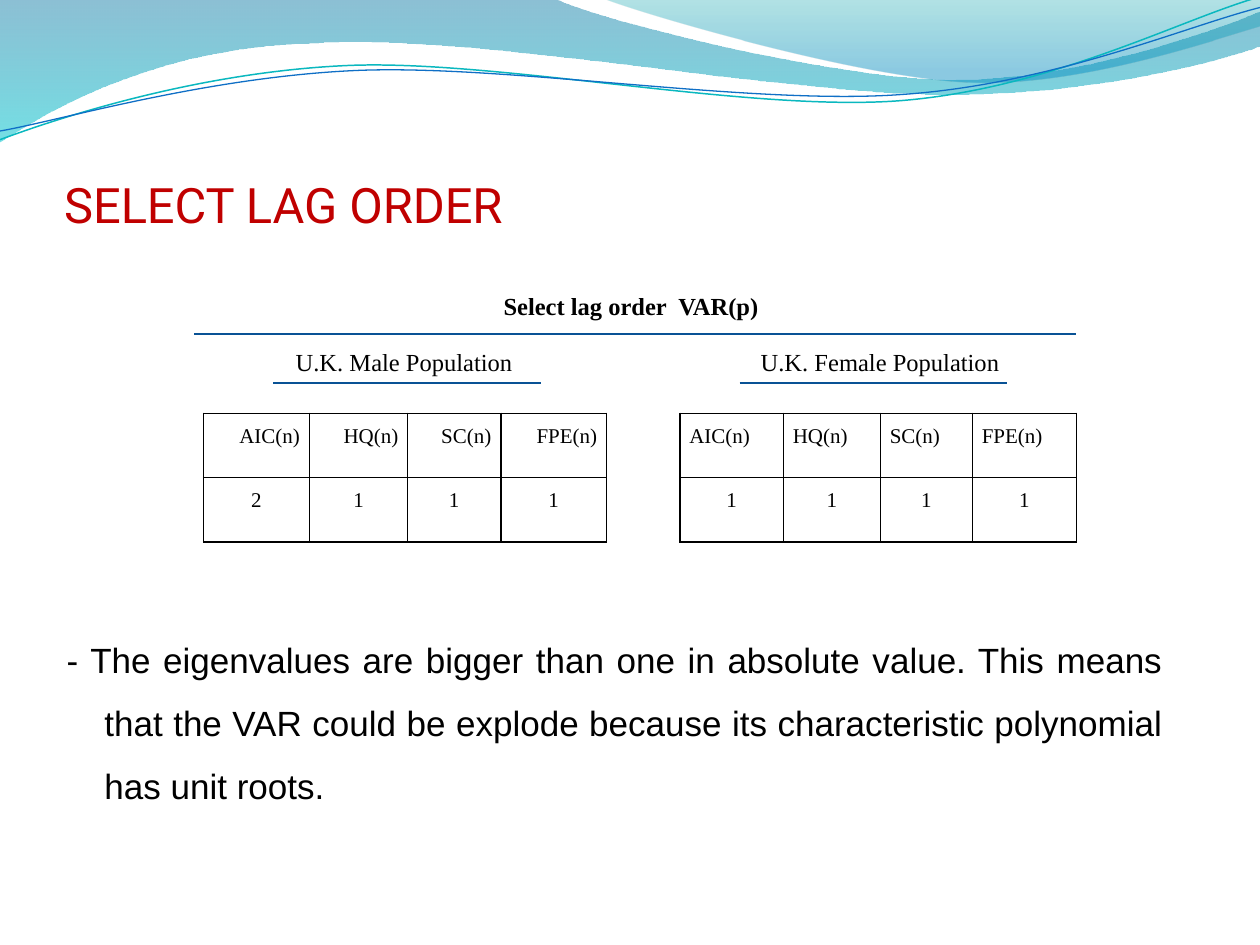
import math

import pptx
import pptx.dml.color
import pptx.enum.shapes
import pptx.enum.text
import pptx.oxml
import pptx.oxml.ns
import pptx.util

Pt = pptx.util.Pt
ALIGN = pptx.enum.text.PP_ALIGN
ANCHOR = pptx.enum.text.MSO_ANCHOR
SERIF = "Times New Roman"


def rgb(code):
    return pptx.dml.color.RGBColor.from_string(code)


def make_xml(markup):
    return pptx.oxml.parse_xml(markup.format(ns=pptx.oxml.ns.nsdecls("a")))


def write_text(frame, text, font=SERIF, size=14, color="000000", bold=False, wrap=True,
               align=ALIGN.LEFT, anchor=ANCHOR.MIDDLE, spacing=1.0, hanging=0, tabs=()):
    frame.word_wrap = wrap
    frame.vertical_anchor = anchor
    paragraph = frame.paragraphs[0]
    paragraph.alignment = align
    paragraph.line_spacing = spacing
    properties = paragraph._p.get_or_add_pPr()
    if hanging:
        properties.set("marL", str(Pt(hanging)))
        properties.set("indent", str(Pt(-hanging)))
    if tabs:
        stops = "".join(f'<a:tab pos="{Pt(tab)}" algn="l"/>' for tab in tabs)
        properties.append(make_xml(f"<a:tabLst {{ns}}>{stops}</a:tabLst>"))
    run = paragraph.add_run()
    run.text = text
    run.font.name = font
    run.font.size = Pt(size)
    run.font.bold = bold
    run.font.color.rgb = rgb(color)


def rotate(point, center, degrees):
    angle = math.radians(degrees)
    dx, dy = point[0] - center[0], point[1] - center[1]
    return (center[0] + dx * math.cos(angle) - dy * math.sin(angle),
            center[1] + dx * math.sin(angle) + dy * math.cos(angle))


class SlideBuilder:
    rule_color = "095295"
    rule_width = 0.75
    border_color = "000000"
    border_width = 1
    row_height = 36.72
    cell_margin = 5.4
    strand_tilt = -2.7

    def __init__(self, slide):
        self.slide = slide

    def outline(self, start, steps, closed):
        corners = [(Pt(x), Pt(y)) for step in steps for x, y in step]
        builder = self.slide.shapes.build_freeform(Pt(start[0]), Pt(start[1]), scale=1.0)
        builder.add_line_segments(corners, close=closed)
        shape = builder.convert_to_shape()
        shape.shadow.inherit = False
        segments = iter(list(shape._element.iter(pptx.oxml.ns.qn("a:lnTo"))))
        for step in steps:
            group = [next(segments) for _ in step]
            if len(group) == 3:
                curve = make_xml("<a:cubicBezTo {ns}/>")
                group[0].addprevious(curve)
                for segment in group:
                    curve.append(segment[0])
                    segment.getparent().remove(segment)
        return shape

    def wave(self, start, steps, stops):
        shape = self.outline(start, steps, True)
        shape.line.fill.background()
        shape.fill.gradient()
        shape.fill.gradient_angle = 270
        for stop, (position, color, opacity) in zip(shape.fill.gradient_stops, stops):
            stop.position = position
            stop.color.rgb = rgb(color)
            stop._gs[0].append(make_xml(f'<a:alpha {{ns}} val="{opacity * 1000}"/>'))

    def strand(self, start, steps, center, color, width):
        level = [[rotate(point, center, -self.strand_tilt) for point in step]
                 for step in [[start]] + steps]
        shape = self.outline(level[0][0], level[1:], False)
        shape.rotation = self.strand_tilt
        shape.fill.background()
        shape.line.color.rgb = rgb(color)
        shape.line.width = Pt(width)

    def text(self, left, top, width, height, text, margins=(7.2, 3.6, 7.2, 3.6), **style):
        frame = self.slide.shapes.add_textbox(*map(Pt, (left, top, width, height))).text_frame
        (frame.margin_left, frame.margin_top,
         frame.margin_right, frame.margin_bottom) = map(Pt, margins)
        write_text(frame, text, **style)

    def rule(self, left, right, y):
        rule = self.slide.shapes.add_connector(
            pptx.enum.shapes.MSO_CONNECTOR.STRAIGHT, Pt(left), Pt(y), Pt(right), Pt(y))
        rule.line.color.rgb = rgb(self.rule_color)
        rule.line.width = Pt(self.rule_width)
        rule._element.spPr.append(make_xml("<a:effectLst {ns}/>"))

    def border(self, cell):
        for index, side in enumerate(("lnL", "lnR", "lnT", "lnB")):
            cell._tc.get_or_add_tcPr().insert(index, make_xml(
                f'<a:{side} {{ns}} w="{Pt(self.border_width)}"><a:solidFill>'
                f'<a:srgbClr val="{self.border_color}"/></a:solidFill></a:{side}>'))

    def table(self, left, top, widths, rows, header_align):
        table = self.slide.shapes.add_table(
            len(rows), len(widths), Pt(left), Pt(top),
            Pt(sum(widths)), Pt(self.row_height * len(rows))).table
        table.first_row = table.horz_banding = False
        for column, width in zip(table.columns, widths):
            column.width = Pt(width)
        for row_index, values in enumerate(rows):
            table.rows[row_index].height = Pt(self.row_height)
            for column_index, value in enumerate(values):
                cell = table.cell(row_index, column_index)
                cell.fill.background()
                cell.margin_left = cell.margin_right = Pt(self.cell_margin)
                cell.margin_top = cell.margin_bottom = 0
                write_text(cell.text_frame, value, size=12, spacing=1.5, anchor=ANCHOR.TOP,
                           align=ALIGN.CENTER if row_index else header_align)
                self.border(cell)


def main():
    deck = pptx.Presentation()
    deck.slide_width, deck.slide_height = Pt(720), Pt(540)
    builder = SlideBuilder(deck.slides.add_slide(deck.slide_layouts[6]))

    builder.wave((0, 0), [
        [(317, -0.7)],
        [(343, 12), (478, 45.4), (546, 45.4)], [(614, 45.4), (690, 19), (720, 6.5)],
        [(720.7, 26)],
        [(708, 32), (626, 55), (537, 54)], [(448, 54), (275, 20), (185, 24.5)],
        [(93, 26), (33, 60), (-0.7, 81.4)],
    ], [(0, "0074A1", 45), (1, "00C6CF", 55)])
    builder.wave((345, -0.7), [
        [(366.5, 8), (491, 44.6), (553.7, 47)], [(616, 49.7), (692, 23), (720, 15)],
        [(720, 0)],
    ], [(0, "00A1A9", 30), (0.8, "008BBF", 45)])
    builder.strand((0, 79.8), [
        [(34.5, 67), (114, 41), (199.5, 37.4)], [(284.5, 34), (427, 64), (513.5, 57.6)],
        [(600, 51), (675, 11), (718.6, -1.4)],
    ], (359.3, 41.4), "0AB8BF", 0.85)
    builder.strand((0, 74.9), [
        [(34, 69), (118, 44), (204, 40.3)], [(290, 36.7), (430, 60.5), (516, 54)],
        [(602, 48), (677.5, 15), (720, 4.3)],
    ], (359.6, 42.5), "0F6FC6", 0.75)

    builder.text(36.7, 43.2, 648, 90, "SELECT LAG ORDER", margins=(0, 3.6, 0, 0),
                 font="Roboto", size=27.9, color="C00000", anchor=ANCHOR.BOTTOM)

    scores = ["AIC(n)", "HQ(n)", "SC(n)", "FPE(n)"]
    builder.table(388.5, 236.2, [59.2, 55.4, 52.6, 59.4],
                  [scores, ["1", "1", "1", "1"]], ALIGN.LEFT)
    builder.table(116.3, 236.2, [60.5, 56.2, 53.2, 60.5],
                  [scores, ["2", "1", "1", "1"]], ALIGN.RIGHT)

    builder.text(280, 162.7, 161.3, 24.5, "Select lag order  VAR(p)", bold=True,
                 wrap=False, align=ALIGN.CENTER)
    builder.text(25.2, 194.7, 554.4, 24.5, "\tU.K. Male Population\tU.K. Female Population",
                 tabs=(136.7, 402.4))
    for left, right, y in [(110.9, 614.9, 190.8), (156.2, 308.9, 218.9), (422.6, 575.3, 218.9)]:
        builder.rule(left, right, y)

    builder.text(31, 349.2, 640.8, 101.5,
                 "- The eigenvalues are bigger than one in absolute value. This means that the VAR "
                 "could be explode because its characteristic polynomial has unit roots.",
                 font="Arial", size=20, align=ALIGN.JUSTIFY, anchor=ANCHOR.TOP,
                 spacing=1.5, hanging=21.6)
    deck.save("out.pptx")


if __name__ == "__main__":
    main()
